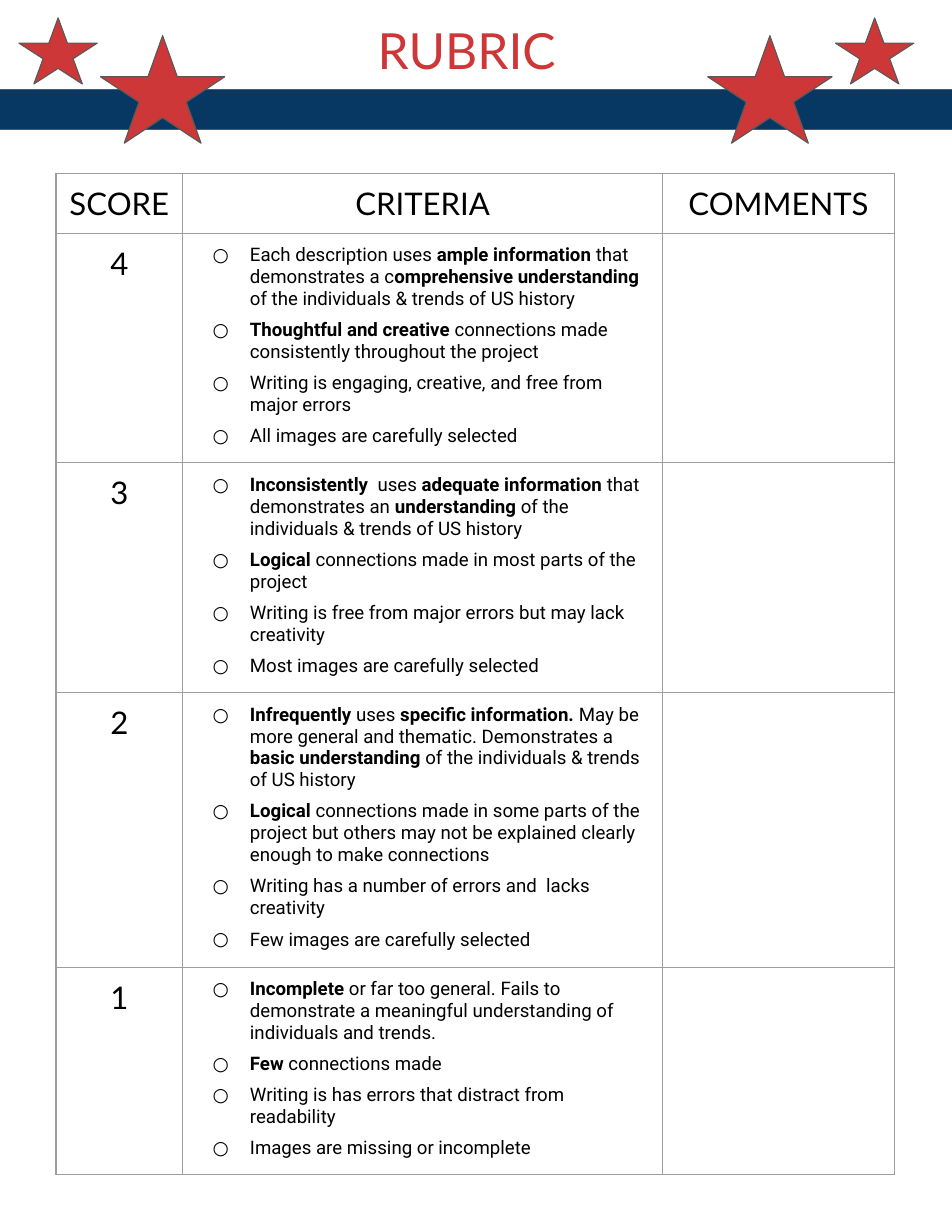
from dataclasses import dataclass

from lxml import etree
from pptx import Presentation
from pptx.dml.color import RGBColor
from pptx.enum.shapes import MSO_SHAPE
from pptx.enum.text import PP_ALIGN
from pptx.oxml.ns import qn
from pptx.util import Pt

RECTANGLE = MSO_SHAPE.RECTANGLE
STAR = MSO_SHAPE.STAR_5_POINT
CENTER, LEFT = PP_ALIGN.CENTER, PP_ALIGN.LEFT


@dataclass(frozen=True)
class Theme:
    navy: str = "073763"
    red: str = "CD3737"
    outline: str = "595959"
    grid: str = "9E9E9E"
    ink: str = "000000"
    heading_font: str = "Lato"
    body_font: str = "Roboto"
    title_size: float = 32
    heading_size: float = 20
    body_size: float = 12
    line_width: float = 0.75
    inset: float = 7.2


THEME = Theme()

HEADINGS = ["SCORE", "CRITERIA", "COMMENTS"]
COLUMN_WIDTHS = [81.5, 308.5, 149]
ROW_HEIGHT = 30  # rows grow to fit their text

# Double asterisks switch bold on and off.
CRITERIA = {
    "4": [
        "Each description uses **ample information** that demonstrates a "
        "c**omprehensive understanding** of the individuals & trends of US history",
        "**Thoughtful and creative** connections made consistently throughout the project",
        "Writing is engaging, creative, and free from major errors",
        "All images are carefully selected",
    ],
    "3": [
        "**Inconsistently ** uses **adequate information** that demonstrates an "
        "**understanding** of the individuals & trends of US history",
        "**Logical **connections made in most parts of the project",
        "Writing is free from major errors but may lack creativity",
        "Most images are carefully selected",
    ],
    "2": [
        "**Infrequently** uses **specific information. **May be more general and thematic. "
        "Demonstrates a **basic understanding** of the individuals & trends of US history",
        "**Logical **connections made in some parts of the project but others may not be "
        "explained clearly enough to make connections",
        "Writing has a number of errors and  lacks creativity",
        "Few images are carefully selected",
    ],
    "1": [
        "**Incomplete **or far too general. Fails to demonstrate a meaningful "
        "understanding of individuals and trends.",
        "**Few **connections made",
        "Writing is has errors that distract from readability",
        "Images are missing or incomplete",
    ],
}


def add_bullet(para, char="○", indent=36, hanging=24):
    properties = para._p.get_or_add_pPr()
    properties.set("marL", str(Pt(indent)))
    properties.set("indent", str(-Pt(hanging)))
    color = etree.SubElement(properties, qn("a:buClr"))
    etree.SubElement(color, qn("a:srgbClr"), val=THEME.ink)
    etree.SubElement(properties, qn("a:buFont"), typeface=THEME.body_font)
    etree.SubElement(properties, qn("a:buChar"), char=char)


def write_text(frame, lines, *, size, font, color=THEME.ink, align=CENTER,
               bullets=False, gap=0, after=0, line_spacing=None):
    """Fill a text frame with one paragraph per line; ** toggles bold."""
    frame.word_wrap = True
    for index, line in enumerate(lines):
        para = frame.add_paragraph() if index else frame.paragraphs[0]
        if bullets:
            add_bullet(para)
        para.alignment = align
        para.space_before = Pt(gap if index else 0)
        para.space_after = Pt(after if index == len(lines) - 1 else 0)
        if line_spacing:
            para.line_spacing = line_spacing
        for part, words in enumerate(line.split("**")):
            if not words:
                continue
            span = para.add_run()
            span.text = words
            span.font.size = Pt(size)
            span.font.name = font
            span.font.bold = part % 2 == 1
            span.font.color.rgb = RGBColor.from_string(color)


def add_outlined_shape(page, kind, box, fill):
    shape = page.shapes.add_shape(kind, *map(Pt, box))
    shape.shadow.inherit = False
    shape.fill.solid()
    shape.fill.fore_color.rgb = RGBColor.from_string(fill)
    shape.line.color.rgb = RGBColor.from_string(THEME.outline)
    shape.line.width = Pt(THEME.line_width)


def set_insets(target):
    for side in ("left", "top", "right", "bottom"):
        setattr(target, f"margin_{side}", Pt(THEME.inset))


def add_title(page, box):
    frame = page.shapes.add_textbox(*map(Pt, box)).text_frame
    set_insets(frame)
    write_text(frame, ["RUBRIC"], size=THEME.title_size, font=THEME.heading_font,
               color=THEME.red, line_spacing=0.85)


def add_banner(page, box):
    """Draw the band, the title over it and the stars at both ends."""
    left, top, width, height = box
    add_outlined_shape(page, RECTANGLE, box, THEME.navy)
    add_title(page, (left + 87.7, top - 46.1, 429.1, 80))
    for offset in (66.8, 457.2):
        add_outlined_shape(page, STAR, (left + offset, top - 34.6, 79.9, 69.1), THEME.red)
    for offset in (539.3, 14.4):
        add_outlined_shape(page, STAR, (left + offset, top - 46.1, 50.4, 42.5), THEME.red)


def style_cell(cell):
    set_insets(cell)
    properties = cell._tc.get_or_add_tcPr()
    for edge in ("lnL", "lnR", "lnT", "lnB"):
        line = etree.SubElement(properties, qn(f"a:{edge}"), w=str(Pt(THEME.line_width)))
        fill = etree.SubElement(line, qn("a:solidFill"))
        etree.SubElement(fill, qn("a:srgbClr"), val=THEME.grid)
    cell.fill.background()


def add_rubric_table(page, left, top):
    rows = len(CRITERIA) + 1
    table = page.shapes.add_table(
        rows, len(HEADINGS), Pt(left), Pt(top),
        Pt(sum(COLUMN_WIDTHS)), Pt(rows * ROW_HEIGHT)).table
    table.first_row = table.horz_banding = False
    for column, width in zip(table.columns, COLUMN_WIDTHS):
        column.width = Pt(width)
    for cell in table.iter_cells():
        style_cell(cell)

    heading = {"size": THEME.heading_size, "font": THEME.heading_font}
    for index, label in enumerate(HEADINGS):
        write_text(table.cell(0, index).text_frame, [label], **heading)
    for index, (score, criteria) in enumerate(CRITERIA.items(), start=1):
        write_text(table.cell(index, 0).text_frame, [score], **heading)
        write_text(table.cell(index, 1).text_frame, criteria, size=THEME.body_size,
                   font=THEME.body_font, align=LEFT, bullets=True, gap=6, after=6)


def main():
    deck = Presentation()
    deck.slide_width, deck.slide_height = Pt(612), Pt(792)
    page = deck.slides.add_slide(deck.slide_layouts[6])
    add_banner(page, (-2.2, 57.6, 615.6, 25.6))
    add_rubric_table(page, 36, 111.5)
    deck.save("out.pptx")


if __name__ == "__main__":
    main()
